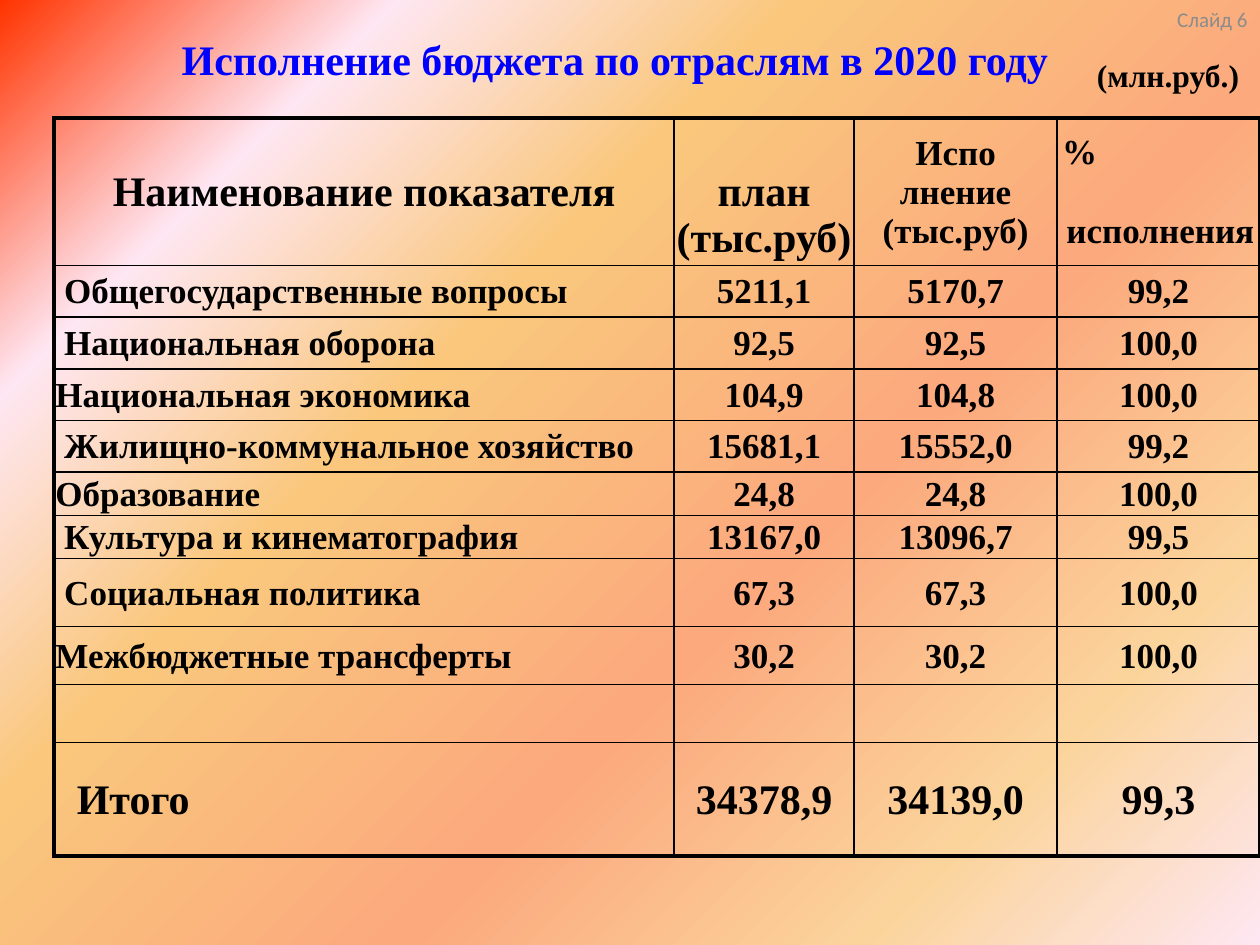
from lxml import etree
from pptx import Presentation
from pptx import util as u
from pptx.dml import color
from pptx.enum import text as t
from pptx.oxml import ns

WIDTH, HEIGHT = 10, 7.5
SERIF = "Times New Roman"
LEFT, CENTER, RIGHT = t.PP_ALIGN.LEFT, t.PP_ALIGN.CENTER, t.PP_ALIGN.RIGHT
TOP, MIDDLE = t.MSO_ANCHOR.TOP, t.MSO_ANCHOR.MIDDLE
STOPS = [(0, "FF3300"), (18, "FEE7F2"), (36, "FAC77D"),
         (61, "FBA97D"), (82, "FBD49C"), (100, "FEE7F2")]
COLUMNS = [4.92, 1.43, 1.61, 1.61]
ROWS = [1.11, 0.41, 0.41, 0.41, 0.41, 0.34, 0.34, 0.54, 0.46, 0.46, 0.9]
FIRST_THIN_ROW = 8
NARROW, INDENT, WIDE_INDENT = 0.01, 0.08, 0.18
BRANCHES = [
    ("Общегосударственные вопросы", INDENT, "5211,1", "5170,7", "99,2"),
    ("Национальная оборона", INDENT, "92,5", "92,5", "100,0"),
    ("Национальная экономика", NARROW, "104,9", "104,8", "100,0"),
    ("Жилищно-коммунальное хозяйство", INDENT, "15681,1", "15552,0", "99,2"),
    ("Образование", NARROW, "24,8", "24,8", "100,0"),
    ("Культура и кинематография", INDENT, "13167,0", "13096,7", "99,5"),
    ("Социальная политика", INDENT, "67,3", "67,3", "100,0"),
    ("Межбюджетные трансферты", NARROW, "30,2", "30,2", "100,0"),
]
TOTAL = ("Итого", WIDE_INDENT, "34378,9", "34139,0", "99,3")


def rgb(value):
    return color.RGBColor.from_string(value)


def write(frame, *lines, size=20, font=SERIF, shade="000000", bold=True, align=CENTER):
    for index, line in enumerate(lines):
        para = frame.paragraphs[0] if index == 0 else frame.add_paragraph()
        para.alignment = align
        span = para.add_run()
        span.text = line
        span.font.size = u.Pt(size)
        span.font.name = font
        span.font.bold = bold
        span.font.color.rgb = rgb(shade)


def paint_background(page):
    fill = page.background.fill
    fill.gradient()
    fill.gradient_angle = 315
    stops = page.element.find(".//" + ns.qn("a:gsLst"))
    for stop in list(stops):
        stops.remove(stop)
    for share, shade in STOPS:
        stop = etree.SubElement(stops, ns.qn("a:gs"), pos=str(share * 1000))
        etree.SubElement(stop, ns.qn("a:srgbClr"), val=shade)


def place(shape, left, top, width, height):
    shape.left, shape.top = u.Inches(left), u.Inches(top)
    shape.width, shape.height = u.Inches(width), u.Inches(height)


def add_title(page, area):
    title = page.shapes.title
    place(title, *area)
    frame = title.text_frame
    frame.word_wrap = False
    frame.auto_size = t.MSO_AUTO_SIZE.NONE
    frame.vertical_anchor = MIDDLE
    write(frame, "Исполнение бюджета по отраслям в 2020 году", size=24, shade="0000FF")


def add_label(page, area, line, anchor=MIDDLE, **style):
    box = page.shapes.add_textbox(*map(u.Inches, area))
    box.text_frame.word_wrap = True
    box.text_frame.vertical_anchor = anchor
    write(box.text_frame, line, **style)


def border(cell, row, column):
    def rule(edge):
        if edge in (0, len(ROWS)):
            return 3
        return 0.5 if edge >= FIRST_THIN_ROW else 1

    weights = {
        "L": 3 if column == 0 else 1,
        "R": 3 if column == len(COLUMNS) - 1 else 1,
        "T": rule(row),
        "B": rule(row + 1),
    }
    properties = cell._tc.get_or_add_tcPr()
    for side, weight in weights.items():
        line = etree.SubElement(properties, ns.qn("a:ln" + side), w=str(u.Pt(weight)))
        solid = etree.SubElement(line, ns.qn("a:solidFill"))
        etree.SubElement(solid, ns.qn("a:srgbClr"), val="000000")


def fill_header(table):
    name, plan, actual, percent = table.rows[0].cells
    write(name.text_frame, "Наименование показателя", size=24)
    plan.margin_top = u.Inches(0.37)
    write(plan.text_frame, "план (тыс.руб)", size=24)
    write(actual.text_frame, "Испо", "лнение", "(тыс.руб)")
    write(percent.text_frame, "%", "исполнения")
    sign, caption = percent.text_frame.paragraphs
    sign.alignment = LEFT
    percent.margin_left = u.Inches(0.04)
    caption.space_before = u.Pt(23)


def fill_row(row, values, size=20):
    name, indent, *amounts = values
    first, *others = row.cells
    first.margin_left = u.Inches(indent)
    write(first.text_frame, name, size=size, align=LEFT)
    for cell, amount in zip(others, amounts):
        write(cell.text_frame, amount, size=size)


def add_budget_table(page, left, top):
    area = (left, top, sum(COLUMNS), sum(ROWS))
    table = page.shapes.add_table(len(ROWS), len(COLUMNS), *map(u.Inches, area)).table
    table.first_row = table.horz_banding = False
    for column, width in zip(table.columns, COLUMNS):
        column.width = u.Inches(width)
    for index, (row, height) in enumerate(zip(table.rows, ROWS)):
        row.height = u.Inches(height)
        for place_in_row, cell in enumerate(row.cells):
            cell.vertical_anchor = MIDDLE
            cell.margin_left = cell.margin_right = cell.margin_top = u.Inches(NARROW)
            cell.margin_bottom = 0
            border(cell, index, place_in_row)
            cell.fill.background()
    fill_header(table)
    for index, branch in enumerate(BRANCHES, 1):
        fill_row(table.rows[index], branch)
    fill_row(table.rows[len(ROWS) - 1], TOTAL, size=24)


def main():
    deck = Presentation()
    deck.slide_width, deck.slide_height = u.Inches(WIDTH), u.Inches(HEIGHT)
    page = deck.slides.add_slide(deck.slide_layouts.get_by_name("Title Only"))
    paint_background(page)
    add_title(page, (0, 0.21, 9.76, 0.52))
    add_label(page, (9.02, 0, 0.98, 0.52), "Слайд 6", anchor=TOP, size=12,
              font="Calibri", shade="8C8C8C", bold=False, align=RIGHT)
    add_label(page, (8.54, 0.36, 1.46, 0.47), "(млн.руб.)", size=18)
    add_budget_table(page, WIDTH - sum(COLUMNS), HEIGHT / 8)
    deck.save("out.pptx")


if __name__ == "__main__":
    main()
